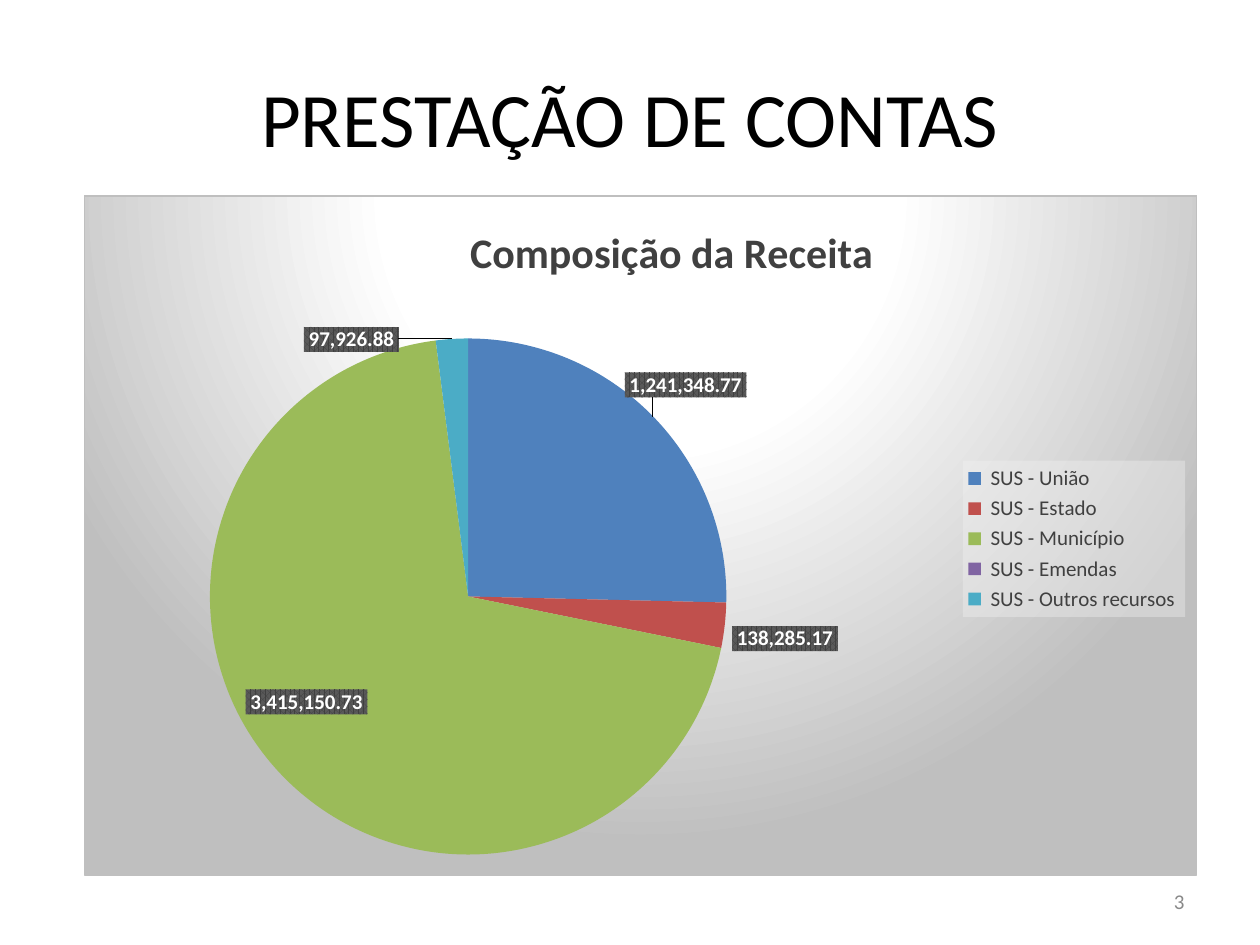
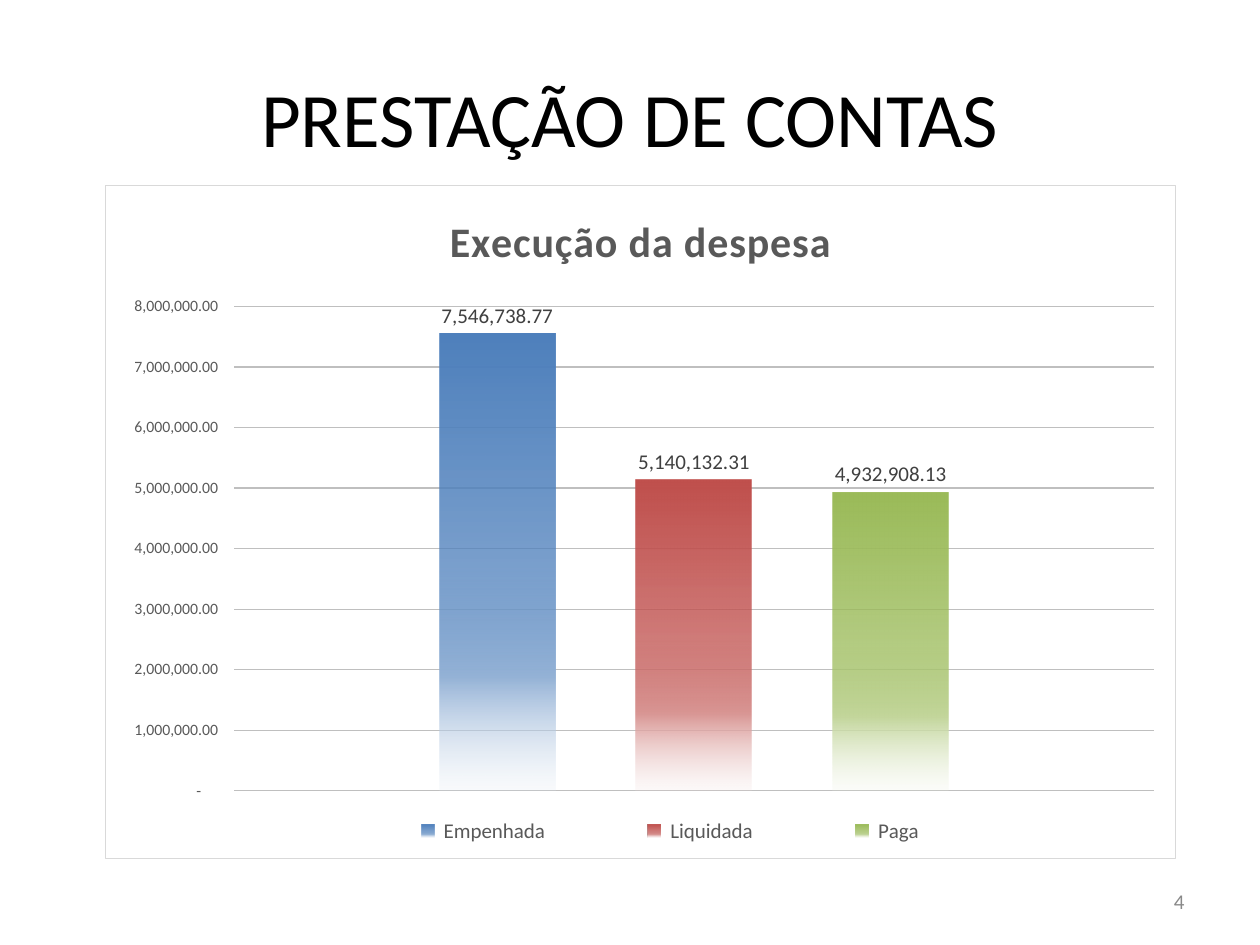
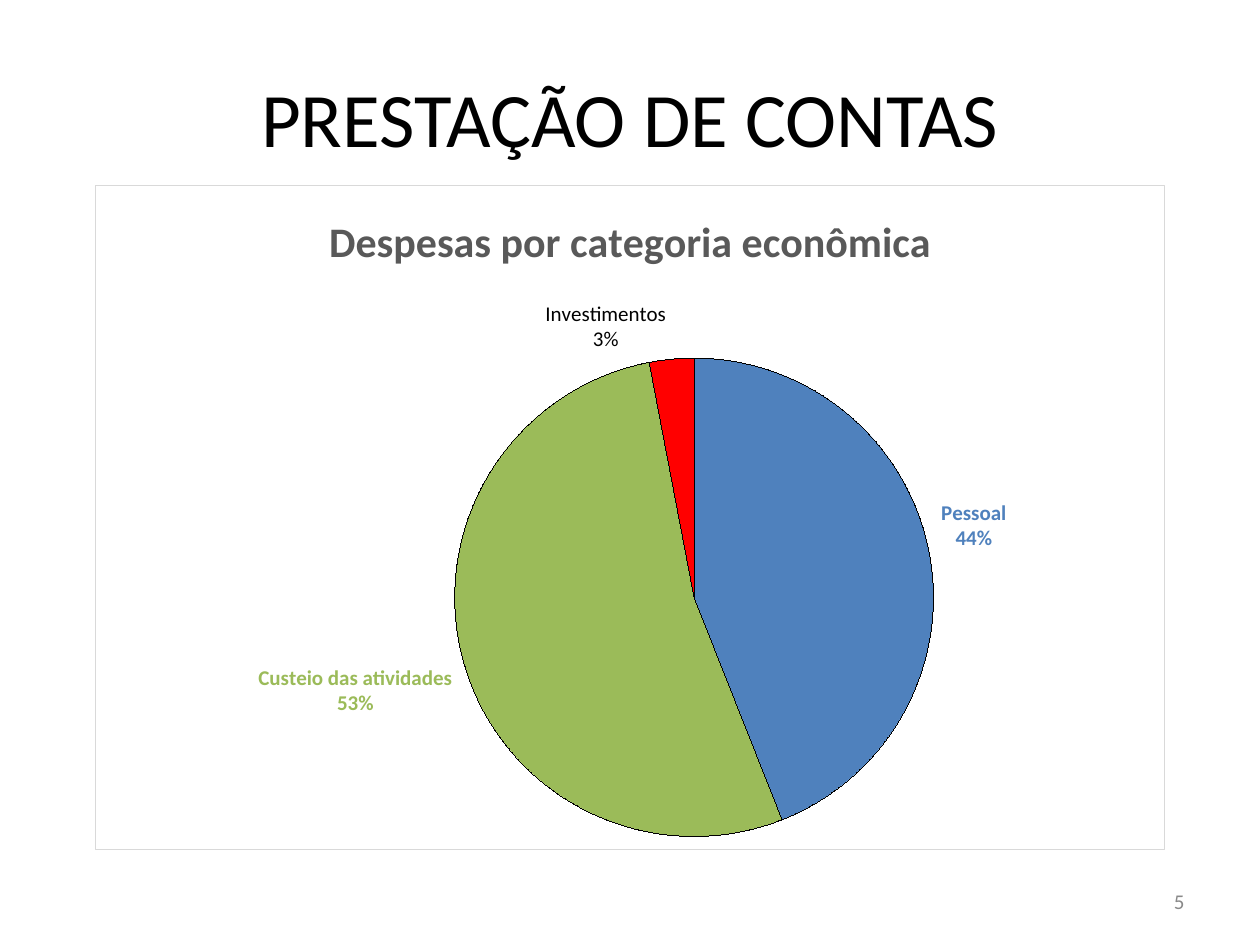
import copy
from dataclasses import dataclass

import pptx
import pptx.chart.data
import pptx.dml.color
import pptx.enum.chart
import pptx.enum.shapes
import pptx.enum.text
import pptx.oxml
import pptx.oxml.ns
import pptx.util

KIND = pptx.enum.chart.XL_CHART_TYPE
SPOT = pptx.enum.chart.XL_LABEL_POSITION
SIDE = pptx.enum.chart.XL_LEGEND_POSITION
TICK = pptx.enum.chart.XL_TICK_MARK
ALIGN = pptx.enum.text.PP_ALIGN
RECT = pptx.enum.shapes.MSO_SHAPE.RECTANGLE
qn = pptx.oxml.ns.qn
SPACE = pptx.oxml.ns.nsdecls("c", "a")
MONEY = '_(* #,##0.00_);_(* \\(#,##0.00\\);_(* "-"??_);_(@_)'


# Theme: colours, sizes and the 120 x 90 grid
@dataclass(frozen=True)
class Theme:
    face: str = "Calibri"
    black: str = "000000"
    white: str = "FFFFFF"
    dark: str = "404040"
    gray: str = "595959"
    mid: str = "898989"
    rule: str = "BFBFBF"
    edge: str = "D9D9D9"
    pale: str = "F2F2F2"
    blue: str = "4F81BD"
    red: str = "C0504D"
    green: str = "9BBB59"
    plum: str = "8064A2"
    aqua: str = "4BACC6"
    alert: str = "FF0000"
    head: int = 44
    title: int = 24
    body: int = 12
    base: int = 10
    tick: int = 9
    wide: float = 10
    high: float = 7.5
    cols: int = 120
    rows: int = 90


T = Theme()


def grid(col, row, cols, rows):
    x, y = T.wide / T.cols, T.high / T.rows
    return [pptx.util.Inches(n) for n in (col * x, row * y, cols * x, rows * y)]


def put(item, vals):
    for name, val in vals.items():
        setattr(item, name, val)


def rgb(color):
    return pptx.dml.color.RGBColor.from_string(color)


def style(font, size, color, bold=False):
    put(font, {"name": T.face, "size": pptx.util.Pt(size), "bold": bold})
    font.color.rgb = rgb(color)


def flood(look, color):
    look.fill.solid()
    look.fill.fore_color.rgb = rgb(color)


# XML pieces that charts need
def node(tag, body="", attrs=""):
    return pptx.oxml.parse_xml(f"<{tag} {SPACE} {attrs}>{body}</{tag}>")


def tint(color, alpha=100):
    return f'<a:srgbClr val="{color}"><a:alpha val="{alpha * 1000}"/></a:srgbClr>'


def solid(color, alpha=100):
    return f"<a:solidFill>{tint(color, alpha)}</a:solidFill>"


def blend(stops, way):
    marks = "".join(f'<a:gs pos="{pos * 1000}">{tint(*color)}</a:gs>'
                    for pos, *color in stops)
    return f"<a:gsLst>{marks}</a:gsLst>{way}"


def place(item, index, **share):
    """Set a manual layout, in shares of the chart's size."""
    for old in item.findall(qn("c:layout")):
        item.remove(old)
    inner = '<c:layoutTarget val="inner"/>' if item.tag == qn("c:plotArea") else ""
    modes = "".join(f'<c:{k}Mode val="edge"/>' for k in share if k in "xy")
    sizes = "".join(f'<c:{k} val="{v}"/>' for k, v in share.items())
    item.insert(index, node(
        "c:layout", f"<c:manualLayout>{inner}{modes}{sizes}</c:manualLayout>"))


# Slide parts
def write(shape, text, size, color, align):
    frame = shape.text_frame
    put(frame, {"word_wrap": True,
                "vertical_anchor": pptx.enum.text.MSO_ANCHOR.MIDDLE})
    para = frame.paragraphs[0]
    para.alignment = align
    run = para.add_run()
    run.text = text
    style(run.font, size, color)


def page(deck, num):
    slide = deck.slides.add_slide(deck.slide_layouts[6])
    foot = slide.shapes.add_textbox(*grid(86, 83.4, 28, 4.8))
    write(foot, str(num), T.body, T.mid, ALIGN.RIGHT)
    head = slide.shapes.add_shape(RECT, *grid(6, 3.6, 108, 15))
    head.shadow.inherit = False
    flood(head, T.white)
    head.line.fill.background()
    write(head, "PRESTAÇÃO DE CONTAS", T.head, T.black, ALIGN.CENTER)
    return slide


# Chart parts
def plot(slide, kind, box, cats, series, title, color, fill, edge):
    data = pptx.chart.data.CategoryChartData()
    data.categories = cats
    for name, vals in series:
        data.add_series(name, vals)
    chart = slide.shapes.add_chart(kind, *grid(*box), data).chart
    style(chart.font, T.base, T.black)
    put(chart, {"has_title": True, "has_legend": False})
    run = chart.chart_title.text_frame.paragraphs[0].add_run()
    run.text = title
    style(run.font, T.title, color, True)
    root = chart._chartSpace
    if root.find(qn("c:roundedCorners")) is None:
        root.find(qn("c:chart")).addprevious(
            node("c:roundedCorners", attrs='val="0"'))
    root.find(qn("c:txPr")).addprevious(
        node("c:spPr", f'{fill}<a:ln w="9525">{solid(edge)}</a:ln>'))
    return chart


def area(chart, x, y, w, h):
    place(chart._chartSpace.find(".//" + qn("c:plotArea")), 0, x=x, y=y, w=w, h=h)


def legend(chart, side, color, **share):
    chart.has_legend = True
    key = chart.legend
    put(key, {"position": side, "include_in_layout": False})
    style(key.font, T.body, color)
    place(key._element, 1, **share)
    return key


def label(series, spot, color, bold=False, fmt=MONEY, **show):
    tags = series.data_labels
    style(tags.font, T.body, color, bold)
    put(tags, {"number_format": fmt, "number_format_is_linked": False,
               "show_value": True, "position": spot, **show})
    return tags


def single(tags, index, shift=None):
    """Give one point its own label, alike the others, moved by a share."""
    root = tags._element
    one = node("c:dLbl", f'<c:idx val="{index}"/>')
    if shift:
        x, y = shift
        one.append(node("c:layout", f'<c:manualLayout><c:x val="{x}"/>'
                                    f'<c:y val="{y}"/></c:manualLayout>'))
    skip = qn("c:dLbl"), qn("c:showLeaderLines")
    one.extend(copy.deepcopy(kid) for kid in root if kid.tag not in skip)
    root.insert(len(root.findall(qn("c:dLbl"))), one)


def paint(series, colors, line=None):
    for i, color in enumerate(colors):
        look = series.points[i].format
        flood(look, color)
        if line:
            look.line.color.rgb = rgb(line)


# Slides
def income(slide):
    way = ('<a:path path="circle"><a:fillToRect l="50000" t="-80000" '
           'r="50000" b="180000"/></a:path>')
    stops = blend([(0, T.white), (39, T.white), (100, T.rule)], way)
    cats = [f" SUS - {name} " for name in
            ("União", "Estado", "Município", "Emendas", "Outros recursos")]
    vals = [1241348.77, 138285.17, 3415150.73, 0, 97926.88]
    chart = plot(slide, KIND.PIE, (8, 18.6, 106, 64.8), cats, [("Series 1", vals)],
                 "Composição da Receita", T.dark,
                 f"<a:gradFill>{stops}</a:gradFill>", T.rule)
    chart.plots[0].vary_by_categories = True
    area(chart, 0.11, 0.21, 0.47, 0.76)
    place(chart.chart_title._element, 1, x=0.34, y=0.03)
    key = legend(chart, SIDE.RIGHT, T.dark, x=0.79, y=0.39, w=0.2, h=0.23)
    key._element.find(qn("c:txPr")).addprevious(
        node("c:spPr", solid(T.pale, 39)))
    pie = chart.plots[0].series[0]
    paint(pie, [T.blue, T.red, T.green, T.plum, T.aqua])
    tags = label(pie, SPOT.BEST_FIT, T.white, True)
    tags._element.find(qn("c:txPr")).addprevious(node(
        "c:spPr", f'<a:pattFill prst="pct75"><a:fgClr>{tint(T.dark)}</a:fgClr>'
                  f"<a:bgClr>{tint(T.gray)}</a:bgClr></a:pattFill>"))
    single(tags, 0, (-0.03, -0.02))
    tags._element.insert(1, node("c:dLbl", '<c:idx val="3"/><c:delete val="1"/>'))
    single(tags, 4, (-0.09, 0.03))


def spending(slide):
    bars = [(" Empenhada ", 7546738.77, T.blue, "95B3D7", "DCE6F2"),
            (" Liquidada ", 5140132.31, T.red, "D99694", "F2DCDB"),
            (" Paga ", 4932908.13, T.green, "C3D69B", "EBF1DE")]
    chart = plot(slide, KIND.COLUMN_CLUSTERED, (10, 17.6, 102, 64.2), ["1"],
                 [(name, [val]) for name, val, *_ in bars],
                 "Execução da despesa", T.gray, solid(T.white), T.edge)
    chart.chart_title.text_frame.paragraphs[0].runs[0].font._element.set("spc", "50")
    area(chart, 0.12, 0.18, 0.86, 0.72)
    legend(chart, SIDE.BOTTOM, T.gray, x=0.21, y=0.93, w=0.64, h=0.06)
    put(chart.plots[0], {"gap_width": 355, "overlap": -70,
                         "vary_by_categories": False})
    chart.category_axis.visible = False
    axis = chart.value_axis
    put(axis, {"minimum_scale": 0, "maximum_scale": 8000000, "major_unit": 1000000,
               "major_tick_mark": TICK.OUTSIDE, "has_major_gridlines": True})
    axis.format.line.fill.background()
    style(axis.tick_labels.font, T.tick, T.gray)
    put(axis.tick_labels, {"number_format": MONEY, "number_format_is_linked": False})
    line = axis.major_gridlines.format.line
    line.color.rgb = rgb(T.rule)
    line.width = pptx.util.Pt(0.75)
    for series, (_, _, full, soft, faint) in zip(chart.plots[0].series, bars):
        fade = [(0, full), (51, full, 75), (75, soft), (100, faint, 15)]
        series._element.get_or_add_spPr().append(node(
            "a:gradFill", blend(fade, '<a:lin ang="5400000" scaled="0"/>')))
        series.invert_if_negative = False
        label(series, SPOT.OUTSIDE_END, T.dark)


def classes(slide):
    cats = [" Pessoal ", " Custeio das atividades ", " Investimentos "]
    chart = plot(slide, KIND.PIE, (9, 17.6, 102, 63.4), cats,
                 [("Series 1", [44, 53, 3])], "Despesas por categoria econômica",
                 T.gray, solid(T.white), T.edge)
    chart.plots[0].vary_by_categories = True
    area(chart, 0.33, 0.26, 0.46, 0.72)
    pie = chart.plots[0].series[0]
    paint(pie, [T.blue, T.green, T.alert], T.black)
    tags = label(pie, SPOT.OUTSIDE_END, T.black, fmt="0%", show_value=False,
                 show_percentage=True, show_category_name=True)
    tags._element.find(qn("c:showBubbleSize")).addnext(node("c:separator", "\n"))
    for i, color in enumerate((T.blue, T.green)):
        single(tags, i)
        style(pie.points[i].data_label.font, T.body, color, True)


def main():
    deck = pptx.Presentation()
    put(deck, {"slide_width": pptx.util.Inches(T.wide),
               "slide_height": pptx.util.Inches(T.high)})
    for num, fill in enumerate((income, spending, classes), 3):
        fill(page(deck, num))
    deck.save("out.pptx")


if __name__ == "__main__":
    main()
